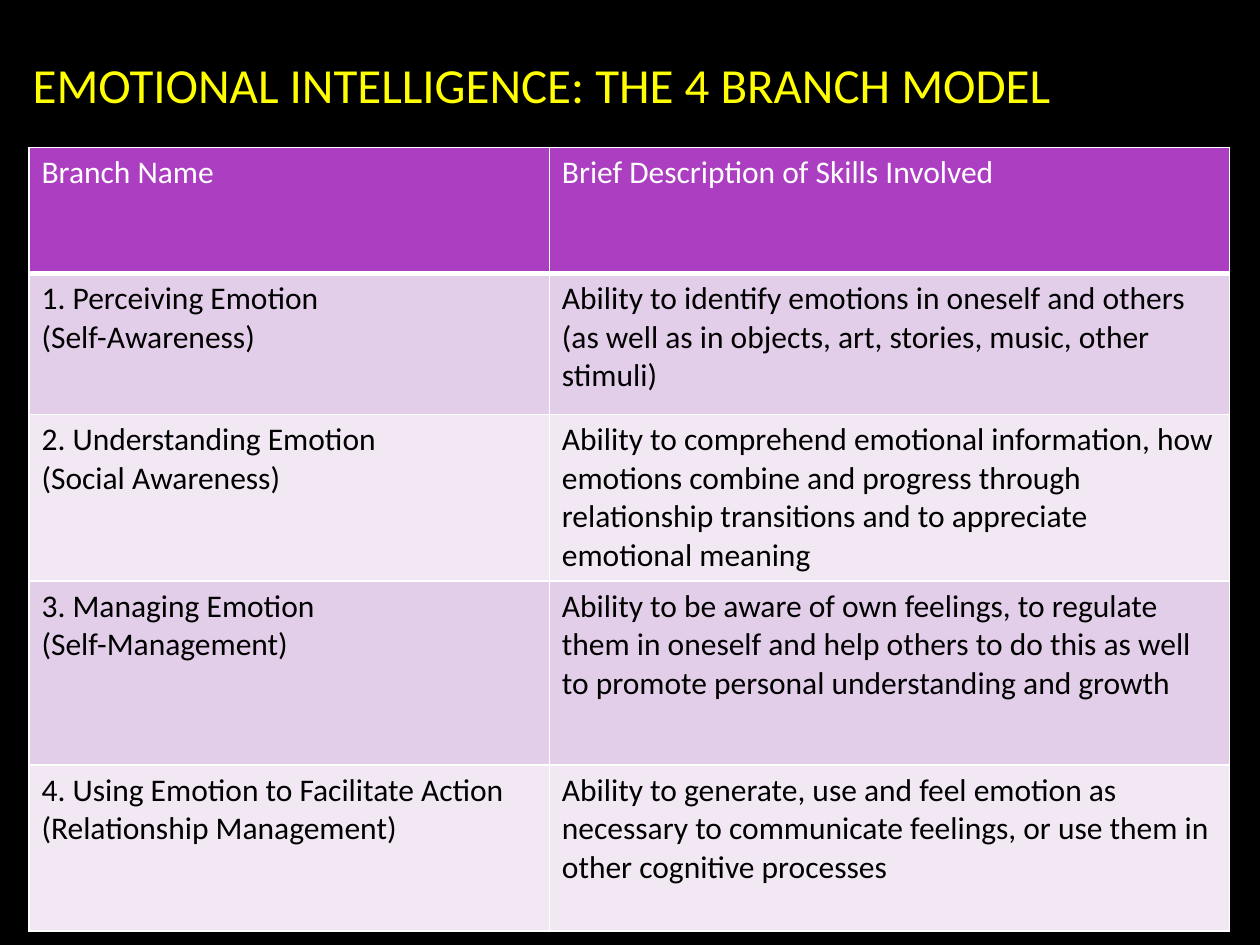
from lxml import etree
from pptx import Presentation
from pptx.dml.color import RGBColor
from pptx.enum.text import MSO_ANCHOR, PP_ALIGN
from pptx.oxml.ns import qn
from pptx.util import Inches, Pt

LEFT, MIDDLE = PP_ALIGN.LEFT, MSO_ANCHOR.MIDDLE
BLACK, WHITE, YELLOW = "000000", "FFFFFF", "FFFF00"
PURPLE, BANDS = "AC3EC1", ("E3CEE9", "F1E8F4")

TITLE = "EMOTIONAL INTELLIGENCE: THE 4 BRANCH MODEL"
HEAD = ("Branch Name", "Brief Description of Skills Involved")
BRANCHES = [
    ("1. Perceiving Emotion\n(Self-Awareness)",
     "Ability to identify emotions in oneself and others "
     "(as well as in objects, art, stories, music, other stimuli)"),
    ("2. Understanding Emotion\n(Social Awareness)",
     "Ability to comprehend emotional information, how emotions combine and "
     "progress through relationship transitions and to appreciate emotional meaning"),
    ("3. Managing Emotion\n(Self-Management)",
     "Ability to be aware of own feelings, to regulate them in oneself and help "
     "others to do this as well to promote personal understanding and growth"),
    ("4. Using Emotion to Facilitate Action\n(Relationship Management)",
     "Ability to generate, use and feel emotion as necessary to communicate "
     "feelings, or use them in other cognitive processes"),
]
COLS = (4.13, 5.4)
ROWS = (1, 1.12, 1.32, 1.46, 1.32)


def paint(fill, color):
    fill.solid()
    fill.fore_color.rgb = RGBColor.from_string(color)


def write(frame, text, size=18, color=BLACK):
    frame.text = text
    for para in frame.paragraphs:
        para.alignment = LEFT
        font = para.runs[0].font
        font.name, font.size, font.bold = "Calibri", Pt(size), False
        font.color.rgb = RGBColor.from_string(color)


def edge(cell, base=1):
    """Draw white borders, with the bottom one base points wide."""
    props = cell._tc.get_or_add_tcPr()
    for spot, (side, width) in enumerate(zip("LRTB", (1, 1, 1, base))):
        line = etree.Element(qn(f"a:ln{side}"), w=str(Pt(width)))
        fill = etree.SubElement(line, qn("a:solidFill"))
        etree.SubElement(fill, qn("a:srgbClr"), val=WHITE)
        props.insert(spot, line)


def main():
    deck = Presentation()
    deck.slide_width, deck.slide_height = Inches(10), Inches(7.5)
    slide = deck.slides.add_slide(deck.slide_layouts[5])
    paint(slide.background.fill, BLACK)

    title = slide.shapes.title
    title.left, title.top = Inches(0.16), Inches(0.25)
    title.width, title.height = Inches(9.69), Inches(0.83)
    write(title.text_frame, TITLE, size=28, color=YELLOW)
    title.text_frame.vertical_anchor = MIDDLE

    table = slide.shapes.add_table(
        len(ROWS), len(COLS), Inches(0.23), Inches(1.17),
        Inches(sum(COLS)), Inches(sum(ROWS))).table
    for col, width in zip(table.columns, COLS):
        col.width = Inches(width)
    for i, (row, height) in enumerate(zip(table.rows, ROWS)):
        row.height = Inches(height)
        top = i == 0
        for cell, text in zip(row.cells, HEAD if top else BRANCHES[i - 1]):
            write(cell.text_frame, text, color=WHITE if top else BLACK)
            paint(cell.fill, PURPLE if top else BANDS[(i - 1) % 2])
            edge(cell, base=3 if top else 1)

    deck.save("out.pptx")


if __name__ == "__main__":
    main()
